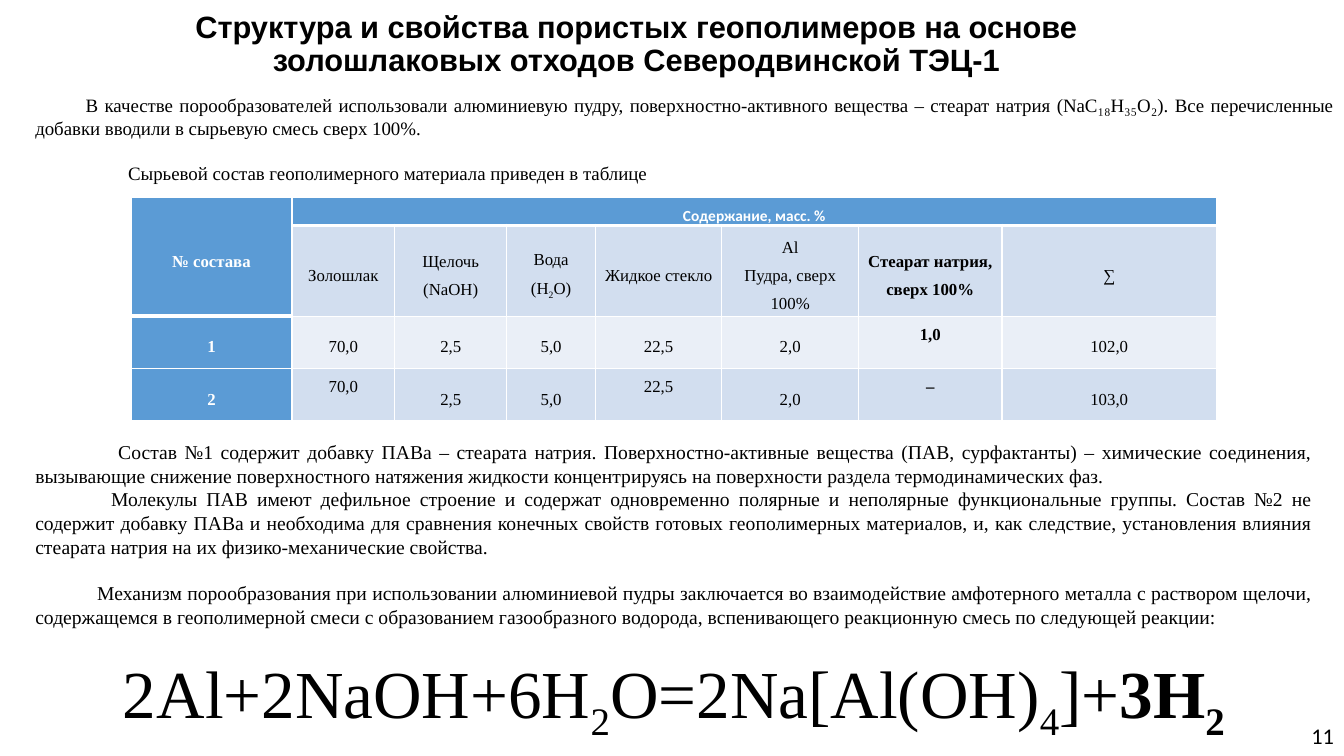
from lxml.etree import SubElement
from pptx import Presentation
from pptx.dml.color import RGBColor
from pptx.enum.text import MSO_ANCHOR, PP_ALIGN
from pptx.oxml.ns import qn
from pptx.util import Cm, Pt

BLACK = RGBColor(0, 0, 0)
WHITE = RGBColor(255, 255, 255)
BLUE = RGBColor(0x5B, 0x9B, 0xD5)
PALE = RGBColor(0xD2, 0xDE, 0xEF)
LIGHT = RGBColor(0xEA, 0xEF, 0xF7)
SERIF = "Times New Roman"
LEFT, MID, RIGHT, FULL = PP_ALIGN.LEFT, PP_ALIGN.CENTER, PP_ALIGN.RIGHT, PP_ALIGN.JUSTIFY

TITLE = "Структура и свойства пористых геополимеров на основе золошлаковых отходов Северодвинской ТЭЦ-1"
INTRO = [
    ("В качестве порообразователей использовали алюминиевую пудру, поверхностно-активного вещества – стеарат натрия (NaC₁₈H₃₅O₂). Все перечисленные добавки вводили в сырьевую смесь сверх 100%.", 1.27, 0),
    ("Сырьевой состав геополимерного материала приведен в таблице", 2.34, 16),
]
NOTES = [
    ("Состав №1 содержит добавку ПАВа – стеарата натрия. Поверхностно-активные вещества (ПАВ, сурфактанты) – химические соединения, вызывающие снижение поверхностного натяжения жидкости концентрируясь на поверхности раздела термодинамических фаз.", 2.09, 0),
    ("Молекулы ПАВ имеют дефильное строение и содержат одновременно полярные и неполярные функциональные группы. Состав №2 не содержит добавку ПАВа и необходима для сравнения конечных свойств готовых геополимерных материалов, и, как следствие, установления влияния стеарата натрия на их физико-механические свойства.", 1.91, 0),
    ("Механизм порообразования при использовании алюминиевой пудры заключается во взаимодействие амфотерного металла с раствором щелочи, содержащемся в геополимерной смеси с образованием газообразного водорода, вспенивающего реакционную смесь по следующей реакции:", 1.56, 16.5),
]
FORMULA = [("2Al+2NaOH+6H", 0, 0), ("2", 0, 1), ("O=2Na[Al(OH)", 0, 0), ("4", 0, 1),
           ("]+", 0, 0), ("3H", 1, 0), ("2", 1, 1)]
WATER = [("(H", 0, 0), ("2", 0, 1), ("O)", 0, 0)]
ROWS = [
    ["№ состава", "Содержание, масс. %"] + [""] * 6,
    ["", "Золошлак", "Щелочь (NaOH)", ["Вода", WATER], "Жидкое стекло",
     ["Аl", "Пудра, сверх 100%"], "Стеарат натрия, сверх 100%", "∑"],
    ["1", "70,0", "2,5", "5,0", "22,5", "2,0", "1,0", "102,0"],
    ["2", "70,0", "2,5", "5,0", "22,5", "2,0", "–", "103,0"],
]
WIDTHS = [4.06, 2.59, 2.82, 2.24, 3.18, 3.45, 3.61, 5.41]
HEIGHTS = [0.7, 2.27, 1.32, 1.32]
BANDS = [BLUE, PALE, LIGHT, PALE]
HIGH = {(2, 6), (3, 1), (3, 4), (3, 6)}


def apply(item, form):
    for key, val in form.items():
        setattr(item, key, val)


def write(para, text, size, name=SERIF, color=BLACK, bold=False):
    parts = [(text, bold, 0)] if isinstance(text, str) else text
    for words, heavy, low in parts:
        run = para.add_run()
        run.text = words
        apply(run.font, {"size": Pt(size), "name": name, "bold": bool(heavy)})
        run.font.color.rgb = color
        if low:
            run.font._element.set("baseline", "-25000")


def add_box(left, top, width, height, anchor=MSO_ANCHOR.TOP):
    frame = slide.shapes.add_textbox(Cm(left), Cm(top), Cm(width), Cm(height)).text_frame
    apply(frame, {"word_wrap": True, "vertical_anchor": anchor})
    return frame


def add_para(frame, first, **form):
    para = frame.paragraphs[0] if first else frame.add_paragraph()
    apply(para, form)
    return para


def add_prose(frame, prose, size):
    for num, (text, indent, gap) in enumerate(prose):
        para = add_para(frame, num == 0, alignment=FULL)
        if gap:
            para.space_before = Pt(gap)
        para._p.get_or_add_pPr().set("indent", str(Cm(indent)))
        write(para, text, size)


def edge(cell, top, base):
    props = cell._tc.get_or_add_tcPr()
    for pos, (side, wide) in enumerate([("L", 1), ("R", 1), ("T", top), ("B", base)]):
        line = SubElement(props, qn("a:ln" + side), w=str(Pt(wide)))
        fill = SubElement(line, qn("a:solidFill"))
        SubElement(fill, qn("a:srgbClr"), val=str(WHITE))
        props.insert(pos, line)


def fill_cell(cell, row, col):
    head = row == 0 or col == 0
    apply(cell, {
        "vertical_anchor": MSO_ANCHOR.TOP if (row, col) in HIGH else MSO_ANCHOR.MIDDLE,
        "margin_left": Cm(0.18), "margin_right": Cm(0.18),
        "margin_top": 0, "margin_bottom": 0})
    cell.fill.solid()
    cell.fill.fore_color.rgb = BLUE if head else BANDS[row]
    thick = row == 0 or (row == 1 and col == 0)
    under = (row == 1 and col > 0) or (row == 2 and col == 0)
    edge(cell, 3 if under else 1, 3 if thick else 1)
    if cell.is_spanned:
        return
    text = ROWS[row][col]
    for num, line in enumerate(text if isinstance(text, list) else [text]):
        para = add_para(cell.text_frame, num == 0, alignment=MID, line_spacing=1.5)
        top = (row, col) == (0, 1)
        write(para, line, 11 if top else 12, "Calibri" if top else SERIF,
              WHITE if head else BLACK, head or col == 6)


deck = Presentation()
apply(deck, {"slide_width": Cm(33.87), "slide_height": Cm(19.05)})
slide = deck.slides.add_slide(deck.slide_layouts[6])

page = add_box(26.25, 18.03, 7.62, 1.02, MSO_ANCHOR.MIDDLE)
write(add_para(page, True, alignment=RIGHT), "11", 16, "Calibri")

title = add_box(4.57, 0.23, 22.94, 1.8, MSO_ANCHOR.MIDDLE)
write(add_para(title, True, alignment=MID, line_spacing=0.9), TITLE, 22, "Arial", bold=True)

add_prose(add_box(0.64, 2.24, 33.23, 2.57), INTRO, 13.5)

table = slide.shapes.add_table(len(ROWS), len(WIDTHS), Cm(3.3), Cm(4.98),
                               Cm(sum(WIDTHS)), Cm(sum(HEIGHTS))).table
for col, width in enumerate(WIDTHS):
    table.columns[col].width = Cm(width)
for row, height in enumerate(HEIGHTS):
    table.rows[row].height = Cm(height)
table.cell(0, 0).merge(table.cell(1, 0))
table.cell(0, 1).merge(table.cell(0, 7))
for row in range(len(ROWS)):
    for col in range(len(WIDTHS)):
        fill_cell(table.cell(row, col), row, col)

notes = add_box(0.64, 10.97, 32.69, 8.28)
add_prose(notes, NOTES, 14)
write(add_para(notes, False, alignment=MID, space_before=Pt(16.5)), FORMULA, 48)

deck.save("out.pptx")
